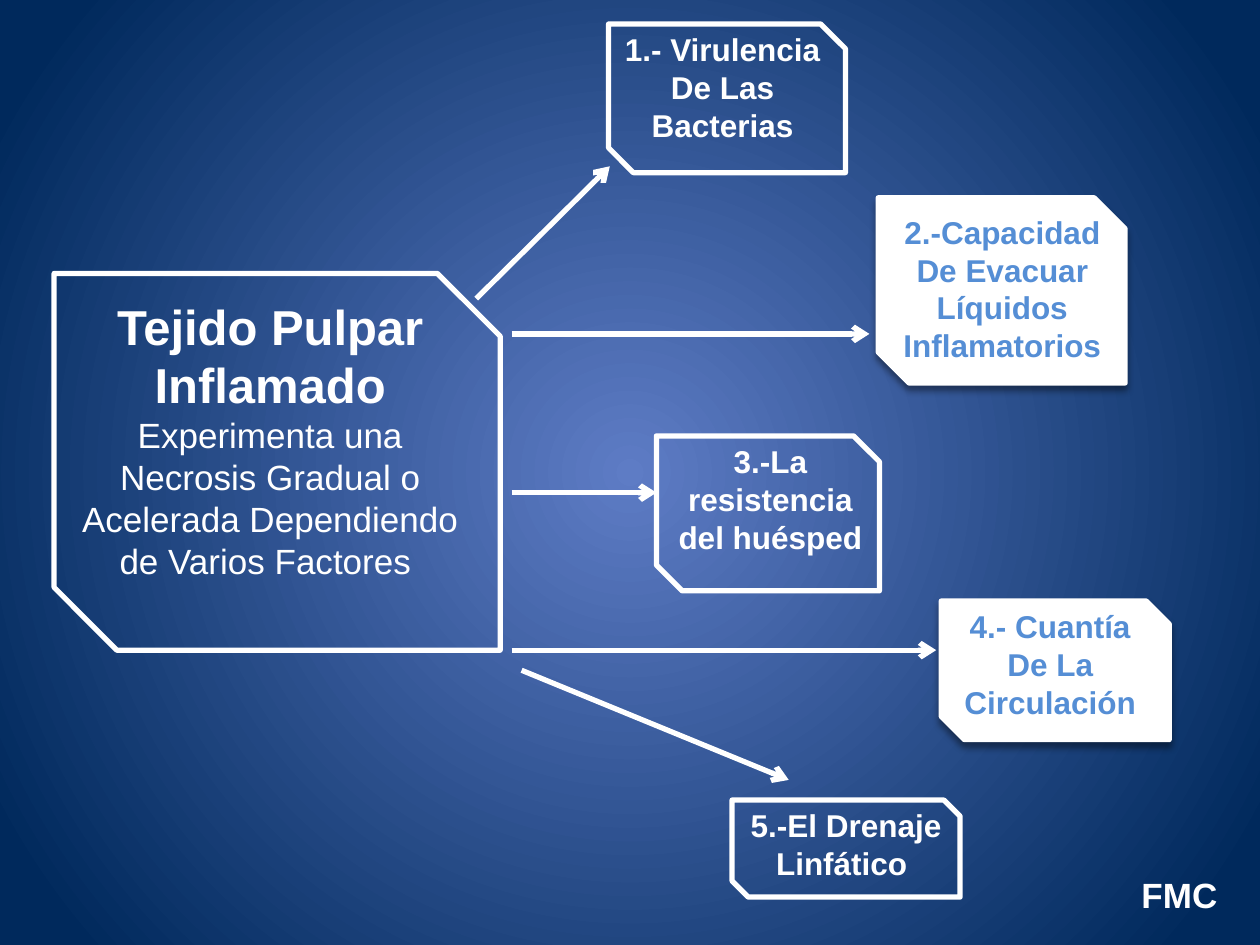
from lxml.etree import SubElement
from pptx import Presentation
from pptx.dml.color import RGBColor
from pptx.enum.shapes import MSO_CONNECTOR, MSO_SHAPE
from pptx.enum.text import MSO_ANCHOR, PP_ALIGN
from pptx.oxml.ns import qn
from pptx.util import Inches, Pt

WHITE, BLUE = "FFFFFF", "558ED5"
CENTER_GLOW, EDGE_NAVY = "5E7CC5", "00295C"

# Each box: runs of (text, size, bold), text area, frame, filled
boxes = [
    ([("Tejido Pulpar Inflamado ", 28, True),
      ("Experimenta una Necrosis Gradual o Acelerada Dependiendo "
       "de Varios Factores ", 20, False)],
     (0.51, 2.3, 3.27, 2.69), (0.43, 2.17, 3.54, 2.99), False),
    ([("1.- Virulencia De Las Bacterias", 18, True)],
     (4.83, 0.19, 1.81, 1.01), (4.83, 0.19, 1.88, 1.18), False),
    ([("2.-Capacidad De Evacuar Líquidos Inflamatorios", 18, True)],
     (7.05, 1.64, 1.81, 1.31), (6.97, 1.57, 1.96, 1.47), True),
    ([("3.-La resistencia del huésped", 18, True)],
     (5.21, 3.46, 1.81, 1.01), (5.21, 3.46, 1.77, 1.23), False),
    ([("4.- Cuantía De La Circulación", 18, True)],
     (7.43, 4.77, 1.81, 1.01), (7.47, 4.77, 1.81, 1.1), True),
    ([("5.-El Drenaje Linfático ", 18, True)],
     (5.81, 6.35, 1.81, 0.71), (5.81, 6.35, 1.81, 0.77), False),
]
arrows = [
    ((3.78, 2.37), (4.84, 1.32)),
    ((4.06, 2.65), (6.9, 2.65)),
    ((4.06, 3.91), (5.21, 3.91)),
    ((4.06, 5.16), (7.43, 5.16)),
    ((4.14, 5.32), (6.26, 6.19)),
]
signature = [("FMC", 20, True)]


def rgb(hex_color):
    return RGBColor.from_string(hex_color)


def inches(values):
    return [Inches(value) for value in values]


def paint_background(slide):
    """Radial gradient, light in the middle of the slide."""
    fill = slide.background.fill
    fill.gradient()
    for stop, position, color in zip(fill.gradient_stops, (0, 0.92),
                                     (CENTER_GLOW, EDGE_NAVY)):
        stop.position = position
        stop.color.rgb = rgb(color)
    gradient = slide.element.xpath(".//p:bgPr/a:gradFill")[0]
    for linear in gradient.findall(qn("a:lin")):
        gradient.remove(linear)
    radial = SubElement(gradient, qn("a:path"), {"path": "circle"})
    SubElement(radial, qn("a:fillToRect"),
               {side: "50000" for side in "ltrb"})


def add_text(slide, runs, area, color=WHITE, align=PP_ALIGN.CENTER,
             anchor=MSO_ANCHOR.TOP):
    frame = slide.shapes.add_textbox(*inches(area)).text_frame
    frame.word_wrap = True
    frame.vertical_anchor = anchor
    paragraph = frame.paragraphs[0]
    paragraph.alignment = align
    for text, size, bold in runs:
        run = paragraph.add_run()
        run.text = text
        run.font.name = "Arial"
        run.font.size = Pt(size)
        run.font.bold = bold
        run.font.color.rgb = rgb(color)


def style_line(line):
    line.color.rgb = rgb(WHITE)
    line.width = Pt(3)


def add_frame(slide, area, filled):
    frame = slide.shapes.add_shape(MSO_SHAPE.SNIP_2_DIAG_RECTANGLE,
                                   *inches(area))
    style_line(frame.line)
    frame.shadow.inherit = False
    if not filled:
        frame.fill.background()
        return
    frame.fill.solid()
    frame.fill.fore_color.rgb = rgb(WHITE)
    effects = frame.element.spPr.find(qn("a:effectLst"))
    shadow = SubElement(effects, qn("a:outerShdw"), {
        "blurRad": str(Pt(4)), "dist": str(Pt(3)), "dir": "5400000",
        "rotWithShape": "0"})
    tint = SubElement(shadow, qn("a:srgbClr"), {"val": "000000"})
    SubElement(tint, qn("a:alpha"), {"val": "40000"})


def add_arrow(slide, start, end):
    arrow = slide.shapes.add_connector(MSO_CONNECTOR.STRAIGHT,
                                       *inches(start + end))
    style_line(arrow.line)
    SubElement(arrow.line._get_or_add_ln(), qn("a:tailEnd"),
               {"type": "arrow"})
    SubElement(arrow.element.spPr, qn("a:effectLst"))


def main():
    deck = Presentation()
    deck.slide_width, deck.slide_height = Inches(10), Inches(7.5)
    slide = deck.slides.add_slide(deck.slide_layouts[6])
    paint_background(slide)
    for runs, text_area, frame_area, filled in boxes:
        add_frame(slide, frame_area, filled)
        add_text(slide, runs, text_area, color=BLUE if filled else WHITE)
    for start, end in arrows:
        add_arrow(slide, start, end)
    add_text(slide, signature, (8.89, 6.9, 0.87, 0.4),
             align=PP_ALIGN.RIGHT, anchor=MSO_ANCHOR.MIDDLE)
    deck.save("out.pptx")


if __name__ == "__main__":
    main()
